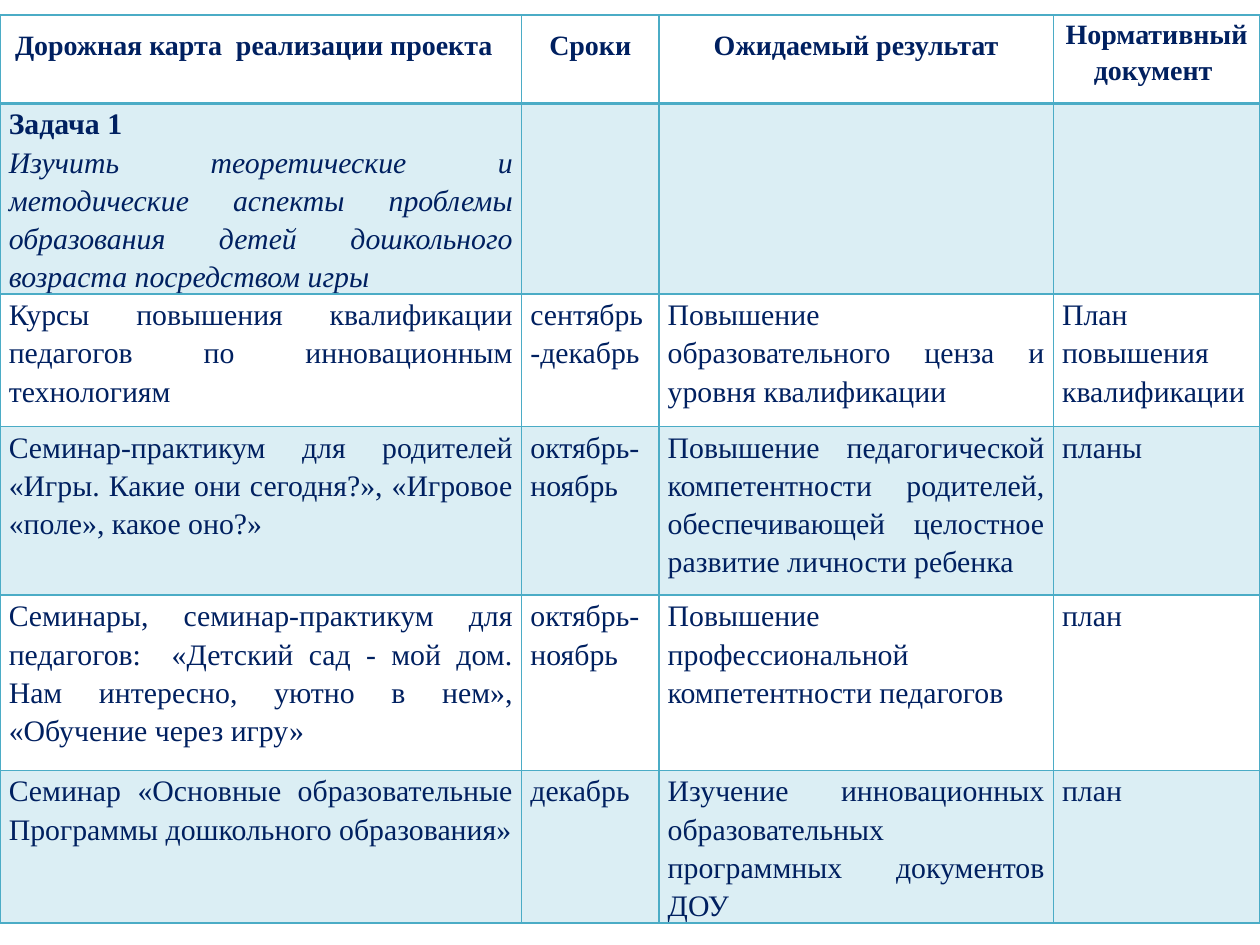
from dataclasses import dataclass

from lxml import etree
from pptx import Presentation
from pptx.dml.color import RGBColor
from pptx.enum.text import MSO_ANCHOR, PP_ALIGN
from pptx.oxml.ns import qn
from pptx.util import Inches, Pt

CENTER, JUSTIFY, TOP = PP_ALIGN.CENTER, PP_ALIGN.JUSTIFY, MSO_ANCHOR.TOP


@dataclass(frozen=True)
class Theme:
    font: str = "Times New Roman"
    ink: str = "002060"
    rule: str = "4BACC6"
    band: str = "DBEEF4"
    plain: str = "FFFFFF"
    head_size: int = 16
    body_size: int = 17
    after: int = 10
    inset: float = 0.07


THEME = Theme()
COLS = [4.14, 1.09, 3.13, 1.64]
ROWS = [0.7, 1.49, 1.05, 1.34, 1.39, 1.2]
TABLE_TOP = 0.12

HEAD = ["Дорожная карта  реализации проекта  ", "Сроки",
        "Ожидаемый результат", "Нормативный документ "]
HEAD_GAPS = [1.5, 1.5, 1.5, 1.15]
TASK = ["Задача 1\nИзучить теоретические и методические аспекты проблемы "
        "образования детей дошкольного возраста посредством игры", "", "", ""]
STEPS = [
    ["Курсы повышения квалификации педагогов по инновационным технологиям",
     "сентябрь-декабрь",
     "Повышение образовательного ценза и уровня квалификации",
     "План повышения квалификации"],
    ["Семинар-практикум для родителей «Игры. Какие они сегодня?», "
     "«Игровое «поле», какое оно?»",
     "октябрь- ноябрь",
     "Повышение педагогической компетентности родителей, обеспечивающей "
     "целостное развитие личности ребенка",
     "планы"],
    ["Семинары, семинар-практикум для педагогов:  «Детский сад - мой дом. "
     "Нам интересно, уютно в нем», «Обучение через игру»",
     "октябрь- ноябрь",
     "Повышение профессиональной компетентности педагогов",
     "план"],
    ["Семинар «Основные образовательные Программы дошкольного образования»",
     "декабрь",
     "Изучение инновационных образовательных программных документов ДОУ",
     "план"],
]


def add_borders(cell, top, bottom):
    props = cell._tc.get_or_add_tcPr()
    for side, width in (("L", 1), ("R", 1), ("T", top), ("B", bottom)):
        line = etree.SubElement(props, qn(f"a:ln{side}"), w=str(Pt(width)))
        fill = etree.SubElement(line, qn("a:solidFill"))
        etree.SubElement(fill, qn("a:srgbClr"), val=THEME.rule)


def style_text(cell, size, align, gap, after):
    for par in cell.text_frame.paragraphs:
        par.alignment, par.line_spacing = align, gap
        par.space_before, par.space_after = Pt(0), Pt(after)
        par.font.size = Pt(size)
        for run in par.runs:
            font = run.font
            font.name, font.size = THEME.font, Pt(size)
            font.bold, font.italic = False, False
            font.color.rgb = RGBColor.from_string(THEME.ink)


def fill_cell(cell, text, row, col):
    head, task = row == 0, row == 1
    cell.text_frame.text = text
    cell.margin_left = cell.margin_right = Inches(THEME.inset)
    cell.margin_top = cell.margin_bottom = 0
    cell.vertical_anchor = TOP
    add_borders(cell, 2 if task else 1, 2 if head else 1)
    cell.fill.solid()
    cell.fill.fore_color.rgb = RGBColor.from_string(
        THEME.band if row % 2 else THEME.plain)
    style_text(cell,
               THEME.head_size if head else THEME.body_size,
               CENTER if head else JUSTIFY,
               HEAD_GAPS[col] if head else 1.15,
               0 if task else THEME.after)
    pars = cell.text_frame.paragraphs
    if head or (task and text):
        pars[0].runs[0].font.bold = True
    if task and text:
        pars[1].runs[0].font.italic = True


def main():
    deck = Presentation()
    deck.slide_width, deck.slide_height = Inches(10), Inches(7.5)
    slide = deck.slides.add_slide(deck.slide_layouts[6])
    table = slide.shapes.add_table(
        len(ROWS), len(COLS), 0, Inches(TABLE_TOP),
        Inches(sum(COLS)), Inches(sum(ROWS))).table
    for col, width in zip(table.columns, COLS):
        col.width = Inches(width)
    for row, height in zip(table.rows, ROWS):
        row.height = Inches(height)
    for r, texts in enumerate([HEAD, TASK, *STEPS]):
        for c, text in enumerate(texts):
            fill_cell(table.cell(r, c), text, r, c)
    deck.save("out.pptx")


if __name__ == "__main__":
    main()
